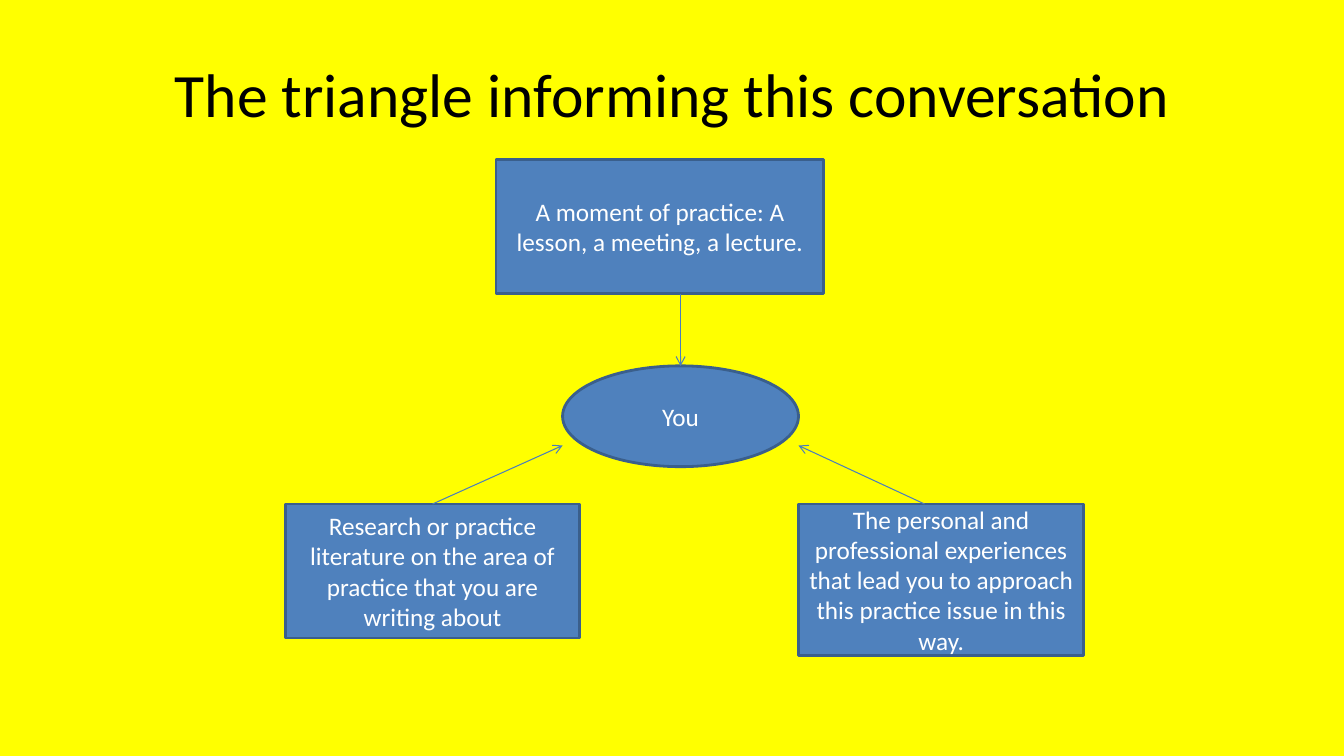
"""Build a slide showing three influences that point to the reader."""
from dataclasses import dataclass
from typing import Optional

import lxml.etree
import pptx
import pptx.dml.color
import pptx.enum.shapes
import pptx.enum.text
import pptx.oxml.ns
import pptx.shapes.autoshape
import pptx.slide
import pptx.text.text
import pptx.util

Inches = pptx.util.Inches
RGBColor = pptx.dml.color.RGBColor
Shapes = pptx.enum.shapes.MSO_SHAPE
TOP = 0


@dataclass(frozen=True)
class Theme:
    """Colours, font and sizes of the slide."""
    background: RGBColor = RGBColor(0xFF, 0xFF, 0x00)
    title: RGBColor = RGBColor(0x00, 0x00, 0x00)
    box_fill: RGBColor = RGBColor(0x4F, 0x81, 0xBD)
    box_line: RGBColor = RGBColor(0x3A, 0x5F, 0x8C)
    box_text: RGBColor = RGBColor(0xFF, 0xFF, 0xFF)
    arrow: RGBColor = RGBColor(0x4B, 0x7E, 0xBC)
    font: str = "Calibri"
    title_size: int = 44
    box_size: int = 18
    box_line_width: float = 2
    arrow_width: float = 0.75


@dataclass(frozen=True)
class Box:
    """A labelled shape, with lengths in inches."""
    text: str
    left: float
    top: float
    width: float
    height: float
    outline: Shapes = Shapes.RECTANGLE


@dataclass(frozen=True)
class Arrow:
    """An arrow between two points, joined to the top of the given boxes."""
    start: tuple[float, float]
    end: tuple[float, float]
    start_box: Optional[Box] = None
    end_box: Optional[Box] = None


THEME = Theme()
PRACTICE = Box("A moment of practice: A lesson, a meeting, a lecture.",
               4.92, 1.58, 3.25, 1.33)
LITERATURE = Box("Research or practice literature on the area of practice "
                 "that you are writing about", 2.83, 5, 2.92, 1.33)
EXPERIENCE = Box("The personal and professional experiences that lead you "
                 "to approach this practice issue in this way.",
                 7.92, 5, 2.83, 1.5)
YOU = Box("You", 5.58, 3.63, 2.34, 1, Shapes.OVAL)
BOXES = (PRACTICE, LITERATURE, EXPERIENCE, YOU)
ARROWS = (
    Arrow((4.29, 5), (5.58, 4.42), start_box=LITERATURE),
    Arrow((6.75, 2.92), (6.75, 3.63), end_box=YOU),
    Arrow((9.17, 5), (7.92, 4.42)),
)


def write_text(frame: pptx.text.text.TextFrame, text: str, size: int,
               color: RGBColor) -> None:
    """Write one centred paragraph into a text frame."""
    frame.text = text
    frame.word_wrap = True
    frame.vertical_anchor = pptx.enum.text.MSO_ANCHOR.MIDDLE
    paragraph = frame.paragraphs[0]
    paragraph.alignment = pptx.enum.text.PP_ALIGN.CENTER
    paragraph.font.name = THEME.font
    paragraph.font.size = pptx.util.Pt(size)
    paragraph.font.color.rgb = color


def add_title(slide: pptx.slide.Slide, text: str) -> None:
    """Place and format the title placeholder."""
    title = slide.shapes.title
    title.left, title.top = Inches(0.67), Inches(0.3)
    title.width, title.height = Inches(12), Inches(1.25)
    write_text(title.text_frame, text, THEME.title_size, THEME.title)


def add_box(slide: pptx.slide.Slide, box: Box) -> pptx.shapes.autoshape.Shape:
    """Draw a labelled shape and return it."""
    shape = slide.shapes.add_shape(
        box.outline, Inches(box.left), Inches(box.top),
        Inches(box.width), Inches(box.height))
    shape.shadow.inherit = False
    shape.fill.solid()
    shape.fill.fore_color.rgb = THEME.box_fill
    shape.line.color.rgb = THEME.box_line
    shape.line.width = pptx.util.Pt(THEME.box_line_width)
    write_text(shape.text_frame, box.text, THEME.box_size, THEME.box_text)
    return shape


def add_arrow(slide: pptx.slide.Slide, arrow: Arrow,
              shapes: dict[Box, pptx.shapes.autoshape.Shape]) -> None:
    """Draw an open-headed arrow and join it to its boxes."""
    connector = slide.shapes.add_connector(
        pptx.enum.shapes.MSO_CONNECTOR.STRAIGHT,
        *map(Inches, arrow.start + arrow.end))
    if arrow.start_box:
        connector.begin_connect(shapes[arrow.start_box], TOP)
    if arrow.end_box:
        connector.end_connect(shapes[arrow.end_box], TOP)
    connector.line.color.rgb = THEME.arrow
    connector.line.width = pptx.util.Pt(THEME.arrow_width)
    qualify = pptx.oxml.ns.qn
    properties = connector.element.spPr
    line = properties.find(qualify("a:ln"))
    lxml.etree.SubElement(line, qualify("a:tailEnd"), type="arrow")
    lxml.etree.SubElement(properties, qualify("a:effectLst"))


def main() -> None:
    """Build and save the presentation."""
    presentation = pptx.Presentation()
    presentation.slide_width = Inches(13.33)
    presentation.slide_height = Inches(7.5)
    title_only = presentation.slide_layouts.get_by_name("Title Only")
    slide = presentation.slides.add_slide(title_only)
    slide.background.fill.solid()
    slide.background.fill.fore_color.rgb = THEME.background
    add_title(slide, "The triangle informing this conversation")
    shapes = {box: add_box(slide, box) for box in BOXES}
    for arrow in ARROWS:
        add_arrow(slide, arrow, shapes)
    presentation.save("out.pptx")


if __name__ == "__main__":
    main()
